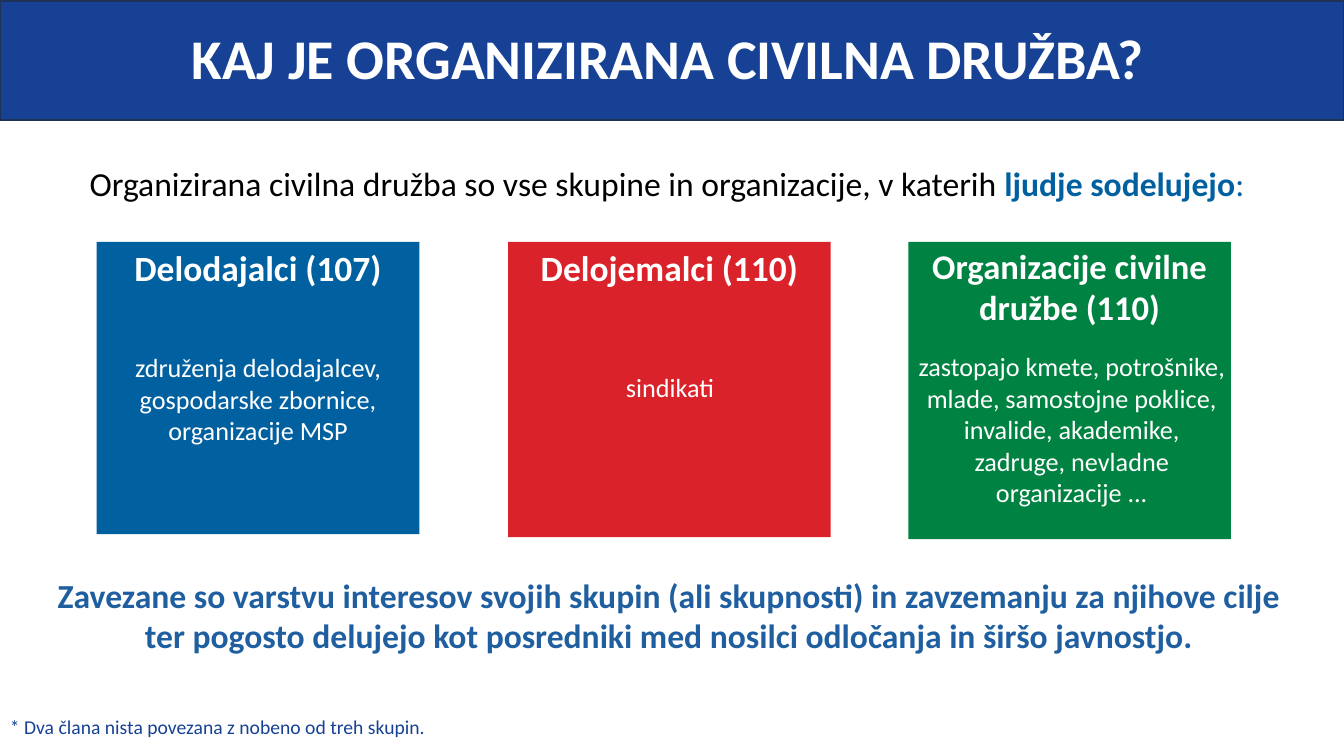
from dataclasses import dataclass

from pptx import Presentation
from pptx.dml.color import RGBColor
from pptx.enum.shapes import MSO_SHAPE
from pptx.enum.text import PP_ALIGN
from pptx.util import Emu, Pt

FONT = "Calibri"
WHITE, BLACK = "FFFFFF", "000000"
NAVY, BLUE, RED, GREEN = "174195", "0060A0", "D9222A", "008342"
EMU_PER_PX = 9144  # 100 px to the inch


@dataclass
class Box:
    left: int
    top: int
    width: int
    height: int

    def emu(self) -> list[Emu]:
        return [Emu(n * EMU_PER_PX) for n in (self.left, self.top, self.width, self.height)]


@dataclass
class Run:
    text: str
    color: str
    bold: bool = False


@dataclass
class Group:
    color: str
    panel: Box
    heading: str
    heading_box: Box
    heading_size: float
    members: list[str]
    members_box: Box


GROUPS = [
    Group(BLUE, Box(96, 240, 320, 290),
          "Delodajalci (107)", Box(96, 239, 320, 54), 25.3,
          ["združenja delodajalcev,", "gospodarske zbornice,", "organizacije MSP"],
          Box(96, 344, 320, 136)),
    Group(RED, Box(504, 240, 320, 293),
          "Delojemalci (110)", Box(504, 239, 320, 54), 25.3,
          ["sindikati"], Box(505, 363, 319, 42)),
    Group(GREEN, Box(901, 240, 320, 295),
          "Organizacije civilne družbe (110)", Box(901, 238, 320, 86), 24.7,
          ["zastopajo kmete, potrošnike, mlade, samostojne poklice, invalide, "
           "akademike, zadruge, nevladne organizacije\u00a0..."],
          Box(901, 343, 324, 199)),
]


def rgb(color: str) -> RGBColor:
    return RGBColor.from_string(color)


def add_rect(slide, box: Box, fill: str, line: str | None = None) -> None:
    sp = slide.shapes.add_shape(MSO_SHAPE.RECTANGLE, *box.emu())
    sp.shadow.inherit = False
    sp.fill.solid()
    sp.fill.fore_color.rgb = rgb(fill)
    if line:
        sp.line.color.rgb = rgb(line)
        sp.line.width = Pt(1)
    else:
        sp.line.fill.background()


def add_text(slide, box: Box, paragraphs: list[list[Run]], *, size: float,
             align: PP_ALIGN = PP_ALIGN.CENTER, line_spacing: float = 1.0,
             inset: tuple[int, int] = (10, 5)) -> None:
    """Add a text box; inset is the horizontal and vertical margin in px."""
    tf = slide.shapes.add_textbox(*box.emu()).text_frame
    tf.word_wrap = True
    tf.margin_left = tf.margin_right = Emu(inset[0] * EMU_PER_PX)
    tf.margin_top = tf.margin_bottom = Emu(inset[1] * EMU_PER_PX)
    for i, runs in enumerate(paragraphs):
        p = tf.add_paragraph() if i else tf.paragraphs[0]
        p.alignment = align
        p.line_spacing = line_spacing
        for run in runs:
            r = p.add_run()
            r.text = run.text
            r.font.name = FONT
            r.font.size = Pt(size)
            r.font.bold = run.bold
            r.font.color.rgb = rgb(run.color)


def add_group(slide, group: Group) -> None:
    add_rect(slide, group.panel, group.color)
    add_text(slide, group.heading_box, [[Run(group.heading, WHITE, True)]],
             size=group.heading_size)
    add_text(slide, group.members_box, [[Run(m, WHITE)] for m in group.members],
             size=18.7)


def main() -> None:
    prs = Presentation()
    prs.slide_width, prs.slide_height = Box(0, 0, 1333, 750).emu()[2:]
    slide = prs.slides.add_slide(prs.slide_layouts[6])

    add_rect(slide, Box(0, 1, 1333, 118), NAVY, line="1E3256")
    add_text(slide, Box(-9, 18, 1343, 117),
             [[Run("KAJ JE ORGANIZIRANA CIVILNA DRUŽBA?", WHITE, True)]], size=40)
    add_text(slide, Box(-5, 161, 1333, 57),
             [[Run("Organizirana civilna družba so vse skupine in organizacije, v katerih",
                   BLACK),
               Run(" ljudje sodelujejo", BLUE, True),
               Run(":", BLUE)]],
             size=24, line_spacing=0.9)
    for group in GROUPS:
        add_group(slide, group)
    add_text(slide, Box(35, 563, 1257, 159),
             [[Run("Zavezane so varstvu interesov svojih skupin (ali skupnosti) in "
                   "zavzemanju za njihove cilje ter pogosto delujejo kot posredniki med "
                   "nosilci odločanja in širšo javnostjo.", "1F5FA0", True)]],
             size=24, inset=(13, 7))
    add_text(slide, Box(0, 704, 934, 34),
             [[Run("*\u00a0Dva člana nista povezana z nobeno od treh skupin.", NAVY)]],
             size=14, align=PP_ALIGN.LEFT)

    prs.save("out.pptx")


if __name__ == "__main__":
    main()
